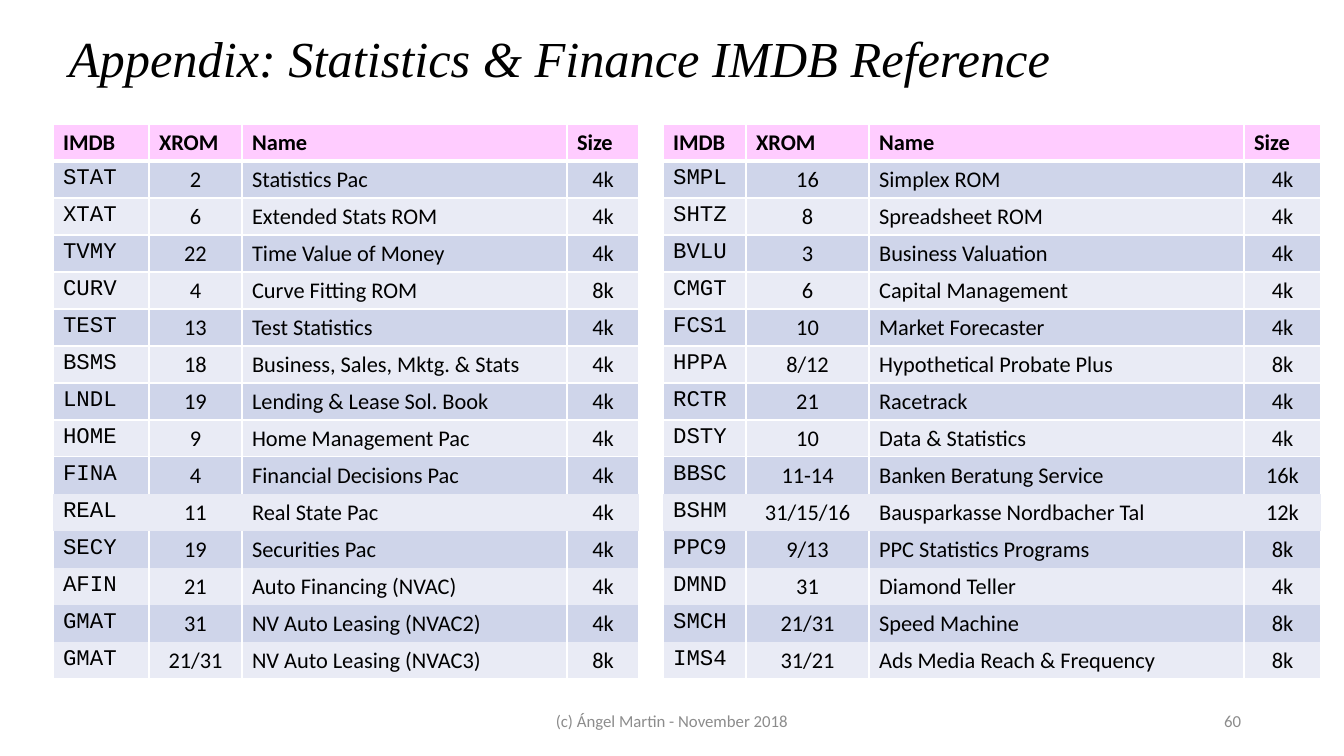
import pptx
import pptx.dml.color
import pptx.enum.text
import pptx.oxml.ns
import pptx.util
from lxml import etree

TITLE = "Appendix: Statistics & Finance IMDB Reference"
FOOTER = "(c) Ángel Martin - November 2018"
PAGE_NUMBER = "60"
HEADINGS = ("IMDB", "XROM", "Name", "Size")
LEFT_MODULES = [
    ("STAT", "2", "Statistics Pac", "4k"),
    ("XTAT", "6", "Extended Stats ROM", "4k"),
    ("TVMY", "22", "Time Value of Money", "4k"),
    ("CURV", "4", "Curve Fitting ROM", "8k"),
    ("TEST", "13", "Test Statistics", "4k"),
    ("BSMS", "18", "Business, Sales, Mktg. & Stats", "4k"),
    ("LNDL", "19", "Lending & Lease Sol. Book", "4k"),
    ("HOME", "9", "Home Management Pac", "4k"),
    ("FINA", "4", "Financial Decisions Pac", "4k"),
    ("REAL", "11", "Real State Pac", "4k"),
    ("SECY", "19", "Securities Pac", "4k"),
    ("AFIN", "21", "Auto Financing (NVAC)", "4k"),
    ("GMAT", "31", "NV Auto Leasing (NVAC2)", "4k"),
    ("GMAT", "21/31", "NV Auto Leasing (NVAC3)", "8k"),
]
RIGHT_MODULES = [
    ("SMPL", "16", "Simplex ROM", "4k"),
    ("SHTZ", "8", "Spreadsheet ROM", "4k"),
    ("BVLU", "3", "Business Valuation", "4k"),
    ("CMGT", "6", "Capital Management", "4k"),
    ("FCS1", "10", "Market Forecaster", "4k"),
    ("HPPA", "8/12", "Hypothetical Probate Plus", "8k"),
    ("RCTR", "21", "Racetrack", "4k"),
    ("DSTY", "10", "Data & Statistics", "4k"),
    ("BBSC", "11-14", "Banken Beratung Service", "16k"),
    ("BSHM", "31/15/16", "Bausparkasse Nordbacher Tal", "12k"),
    ("PPC9", "9/13", "PPC Statistics Programs", "8k"),
    ("DMND", "31", "Diamond Teller", "4k"),
    ("SMCH", "21/31", "Speed Machine", "8k"),
    ("IMS4", "31/21", "Ads Media Reach & Frequency", "8k"),
]
COLUMN_WIDTHS = (96, 93, 325, 72, 23, 83, 123, 375, 77)
ROW_HEIGHT = 37
GAP_COLUMN = 4
UNRULED_ROW = 10

BLACK = pptx.dml.color.RGBColor(0x00, 0x00, 0x00)
GREY = pptx.dml.color.RGBColor(0x8C, 0x8C, 0x8C)
PINK = pptx.dml.color.RGBColor(0xFF, 0xCC, 0xFF)
WHITE = pptx.dml.color.RGBColor(0xFF, 0xFF, 0xFF)
BANDS = (pptx.dml.color.RGBColor(0xE9, 0xEB, 0xF5),
         pptx.dml.color.RGBColor(0xCF, 0xD5, 0xEA))
ALIGN = pptx.enum.text.PP_ALIGN
ANCHOR = pptx.enum.text.MSO_ANCHOR
EMU_PER_PX = 914400 / 100.8


def px(length):
    return pptx.util.Emu(round(length * EMU_PER_PX))


def style(paragraph, face, size, color, align=ALIGN.LEFT, bold=False, italic=False):
    paragraph.alignment = align
    font = paragraph.font
    font.name, font.size, font.bold, font.italic = face, pptx.util.Pt(size), bold, italic
    font.color.rgb = color


def add_label(slide, box, text, anchor, *look, **options):
    frame = slide.shapes.add_textbox(*map(px, box)).text_frame
    frame.word_wrap = True
    frame.vertical_anchor = anchor
    paragraph = frame.paragraphs[0]
    paragraph.text = text
    style(paragraph, *look, **options)
    return paragraph


def rule_widths(row, last_row):
    side = 0 if row == UNRULED_ROW else 1
    top = 3 if row == 1 else int(row < UNRULED_ROW)
    bottom = 3 if row == 0 else int(row < UNRULED_ROW - 1 or row == last_row)
    return {"lnL": side, "lnR": side, "lnT": top, "lnB": bottom}


def rule_cell(cell, widths):
    properties = cell._tc.get_or_add_tcPr()
    qn = pptx.oxml.ns.qn
    for edge, width in widths.items():
        line = etree.SubElement(properties, qn("a:" + edge), w=str(pptx.util.Pt(width)))
        if width:
            fill = etree.SubElement(line, qn("a:solidFill"))
            etree.SubElement(fill, qn("a:srgbClr"), val=str(WHITE))
        else:
            etree.SubElement(line, qn("a:noFill"))


def fill_cell(cell, text, row, column):
    paragraph = cell.text_frame.paragraphs[0]
    if column == GAP_COLUMN:
        cell.fill.background()
        etree.SubElement(paragraph._p, pptx.oxml.ns.qn("a:endParaRPr"), sz="1600")
        return
    cell.fill.solid()
    cell.fill.fore_color.rgb = BANDS[row % 2] if row else PINK
    paragraph.text = text
    heading = HEADINGS[column % (GAP_COLUMN + 1)]
    face = "Courier New" if row and heading == "IMDB" else "Calibri"
    align = ALIGN.CENTER if row and heading in ("XROM", "Size") else ALIGN.LEFT
    style(paragraph, face, 16, BLACK, align, bold=row == 0)


def add_modules(slide):
    rows = [left + ("",) + right for left, right in
            zip([HEADINGS] + LEFT_MODULES, [HEADINGS] + RIGHT_MODULES)]
    box = (53, 124, sum(COLUMN_WIDTHS), ROW_HEIGHT * len(rows))
    modules = slide.shapes.add_table(len(rows), len(COLUMN_WIDTHS), *map(px, box)).table
    modules.first_row = modules.horz_banding = False
    for column, width in zip(modules.columns, COLUMN_WIDTHS):
        column.width = px(width)
    for row, texts in enumerate(rows):
        modules.rows[row].height = px(ROW_HEIGHT)
        for column, text in enumerate(texts):
            cell = modules.cell(row, column)
            rule_cell(cell, rule_widths(row, len(rows) - 1))
            fill_cell(cell, text, row, column)


def main():
    deck = pptx.Presentation()
    deck.slide_width, deck.slide_height = px(1344), px(756)
    slide = deck.slides.add_slide(deck.slide_layouts[6])
    add_label(slide, (445, 701, 454, 40), FOOTER, ANCHOR.MIDDLE,
              "Calibri", 12, GREY, ALIGN.CENTER)
    add_label(slide, (949, 701, 302, 40), PAGE_NUMBER, ANCHOR.MIDDLE,
              "Calibri", 12, GREY, ALIGN.RIGHT)
    add_modules(slide)
    title = add_label(slide, (59, 29, 1159, 95), TITLE, ANCHOR.TOP,
                      "Times New Roman", 36, BLACK, italic=True)
    title.line_spacing = 0.9
    deck.save("out.pptx")


if __name__ == "__main__":
    main()
